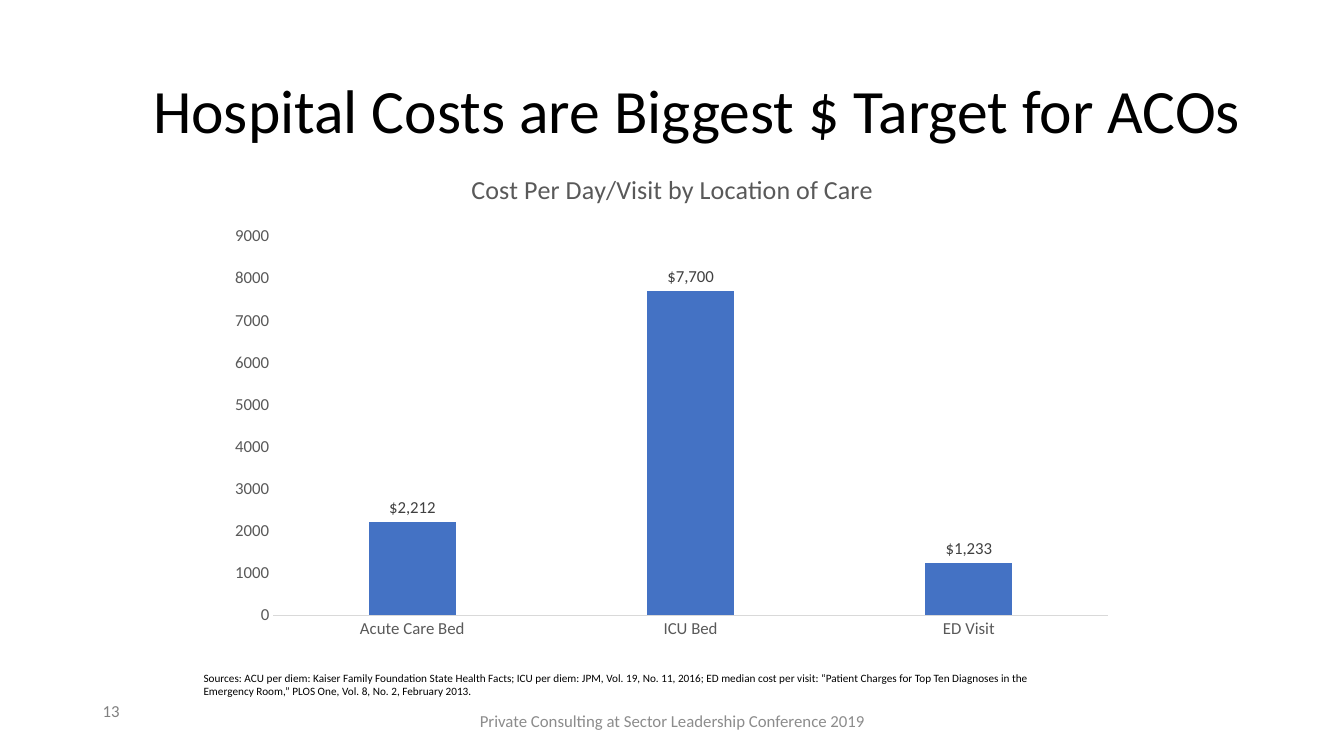
import pptx
import pptx.chart.data
import pptx.dml.color
import pptx.enum.chart
import pptx.enum.text
import pptx.oxml
import pptx.oxml.ns
import pptx.util

Inches = pptx.util.Inches
Align = pptx.enum.text.PP_ALIGN
Anchor = pptx.enum.text.MSO_ANCHOR
Chart = pptx.enum.chart

COSTS = {"Acute Care Bed": 2212, "ICU Bed": 7700, "ED Visit": 1233}
SOURCES = (
    "Sources: ACU per diem: Kaiser Family Foundation State Health Facts; "
    "ICU per diem: JPM, Vol. 19, No. 11, 2016; ED median cost per visit: "
    "“Patient Charges for Top Ten Diagnoses in the Emergency Room,” "
    "PLOS One, Vol. 8, No. 2, February 2013."
)


def paint(color, code):
    color.rgb = pptx.dml.color.RGBColor.from_string(code)


def style(font, size, code):
    font.name = "Calibri"
    font.size = pptx.util.Pt(size)
    font.bold = False
    paint(font.color, code)


def add_text(slide, box, text, size, code, align=Align.LEFT, anchor=Anchor.TOP):
    frame = slide.shapes.add_textbox(*map(Inches, box)).text_frame
    frame.word_wrap = True
    frame.vertical_anchor = anchor
    frame.text = text
    line = frame.paragraphs[0]
    line.alignment = align
    style(line.runs[0].font, size, code)
    return line


def set_axis(axis):
    axis.has_major_gridlines = False
    axis.major_tick_mark = Chart.XL_TICK_MARK.NONE
    axis.minor_tick_mark = Chart.XL_TICK_MARK.NONE
    style(axis.tick_labels.font, 12, "595959")


def place_plot(chart, x, y, w, h):
    area = chart.plots[0]._element.getparent()
    for old in area.findall(pptx.oxml.ns.qn("c:layout")):
        area.remove(old)
    sizes = "".join(
        f'<c:{key} val="{val}"/>' for key, val in zip("xywh", (x, y, w, h))
    )
    area.insert(0, pptx.oxml.parse_xml(
        f'<c:layout {pptx.oxml.ns.nsdecls("c")}><c:manualLayout>'
        '<c:layoutTarget val="inner"/><c:xMode val="edge"/><c:yMode val="edge"/>'
        f'{sizes}</c:manualLayout></c:layout>'
    ))


def add_costs(slide, box):
    data = pptx.chart.data.CategoryChartData()
    data.categories = list(COSTS)
    data.add_series("Series 1", list(COSTS.values()))
    kind = Chart.XL_CHART_TYPE.COLUMN_CLUSTERED
    chart = slide.shapes.add_chart(kind, *map(Inches, box), data).chart
    style(chart.font, 10, "000000")
    chart.has_legend = False
    chart.has_title = True
    title = chart.chart_title.text_frame
    title.text = "Cost Per Day/Visit by Location of Care"
    style(title.paragraphs[0].runs[0].font, 18.6, "595959")
    chart.chart_title.include_in_layout = False

    set_axis(chart.category_axis)
    base = chart.category_axis.format.line
    paint(base.color, "D9D9D9")
    base.width = pptx.util.Pt(0.75)
    scale = chart.value_axis
    set_axis(scale)
    scale.minimum_scale, scale.maximum_scale, scale.major_unit = 0, 9000, 1000
    scale.format.line.fill.background()
    scale.tick_labels.number_format = "General"
    scale.tick_labels.number_format_is_linked = False

    plot = chart.plots[0]
    plot.vary_by_categories = False
    plot.gap_width, plot.overlap = 219, -27
    bars = plot.series[0]
    bars.format.fill.solid()
    paint(bars.format.fill.fore_color, "4472C4")
    labels = bars.data_labels
    labels.show_value = True
    labels.position = Chart.XL_LABEL_POSITION.OUTSIDE_END
    labels.number_format = '"$"#,##0;[Red]\\-"$"#,##0'
    labels.number_format_is_linked = False
    style(labels.font, 12, "404040")
    place_plot(chart, 0.06, 0.17, 0.92, 0.76)


def main():
    deck = pptx.Presentation()
    deck.slide_width, deck.slide_height = Inches(13.33), Inches(7.5)
    slide = deck.slides.add_slide(deck.slide_layouts[6])
    title = add_text(
        slide, (1.42, 0.4, 10.99, 1.45),
        "Hospital Costs are Biggest $ Target for ACOs",
        44, "000000", anchor=Anchor.MIDDLE,
    )
    title.line_spacing = 0.9
    add_costs(slide, (2.17, 1.5, 9, 4.95))
    add_text(slide, (0.92, 6.9, 3, 0.4), "13", 12, "808080")
    add_text(slide, (1.92, 6.61, 8.72, 0.37), SOURCES, 8, "000000")
    add_text(
        slide, (4.42, 6.95, 4.5, 0.4),
        "Private Consulting at Sector Leadership Conference 2019",
        12, "8C8C8C", Align.CENTER, Anchor.MIDDLE,
    )
    deck.save("out.pptx")


if __name__ == "__main__":
    main()
